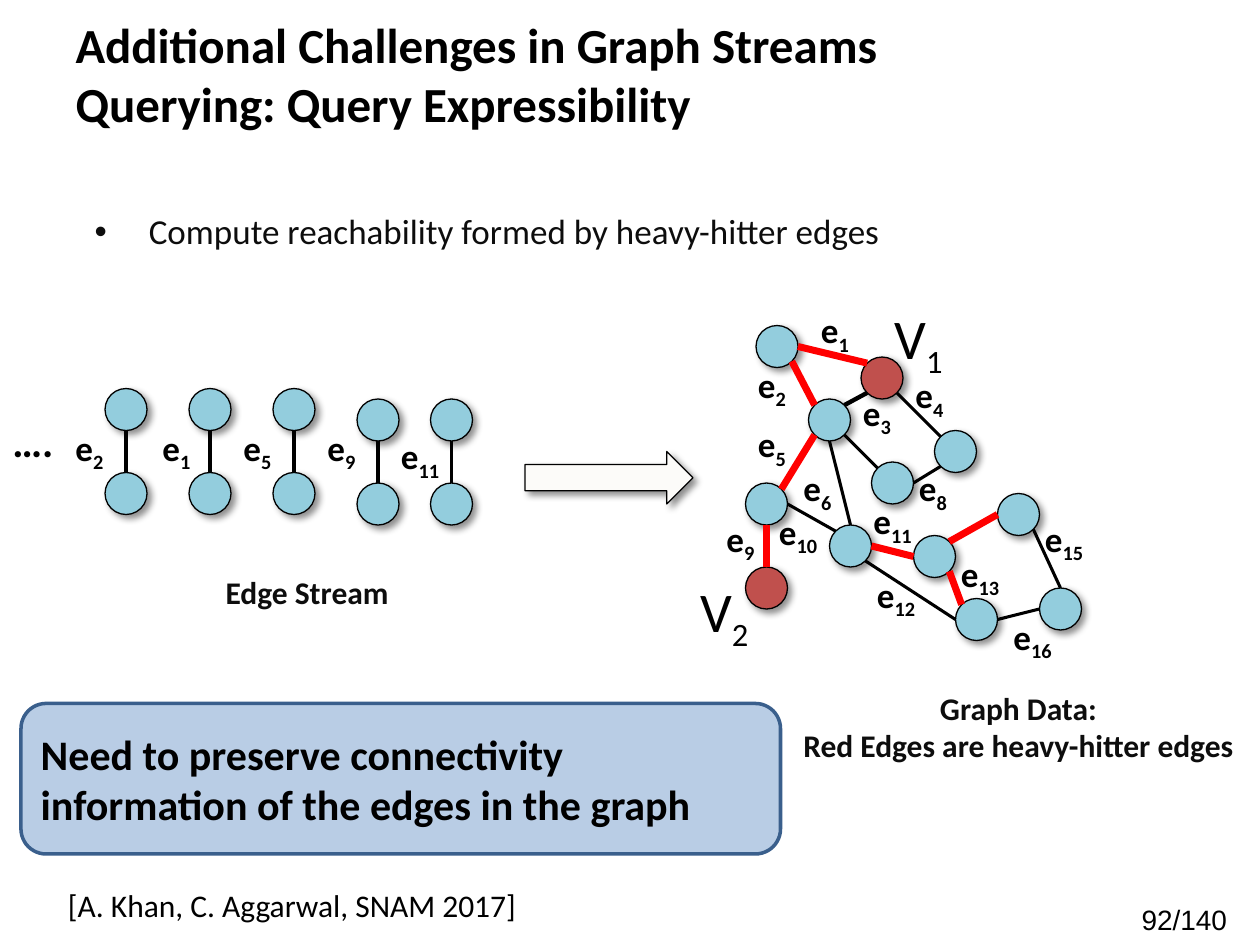
from math import cos, radians, sin

from lxml.etree import SubElement
from pptx import Presentation
from pptx.dml.color import RGBColor
from pptx.enum.shapes import MSO_CONNECTOR, MSO_SHAPE
from pptx.enum.text import MSO_ANCHOR, MSO_AUTO_SIZE, PP_ALIGN
from pptx.oxml.ns import qn
from pptx.util import Pt

BLACK = RGBColor(0x00, 0x00, 0x00)
INK = RGBColor(0x0D, 0x0D, 0x0D)
RED = RGBColor(0xFF, 0x00, 0x00)
NODE_BLUE = RGBColor(0x93, 0xCD, 0xDD)
NODE_RED = RGBColor(0xC0, 0x50, 0x4D)
ARROW_FILL = RGBColor(0xFC, 0xFB, 0xF9)
CALLOUT_FILL = RGBColor(0xB9, 0xCD, 0xE5)
CALLOUT_LINE = RGBColor(0x3A, 0x5F, 0x8C)

RADIUS = 12
COMPASS = {"E": 0, "SE": 45, "S": 90, "SW": 135, "W": 180, "NW": 225, "N": 270, "NE": 315}

NODES = {
    "start": (54, 30), "v1": (114, 48), "upper right": (156, 90), "left": (48, 120),
    "v2": (48, 168), "centre": (96, 144), "upper centre": (120, 108),
    "lower centre": (144, 150), "right": (192, 126), "far right": (216, 180),
    "bottom": (168, 186), "hub": (84, 72),
}
HEAVY_EDGES = [
    ("start", "SE", "hub", "NW"), ("start", "E", "v1", "NW"), ("left", "NE", "hub", "SW"),
    ("v2", "N", "left", "S"), ("centre", "E", "lower centre", "W"),
    ("lower centre", "SE", "bottom", "NW"), ("lower centre", "NE", "right", "W"),
]
LIGHT_EDGES = [
    ("left", "E", "centre", "NW"), ("hub", "SE", "upper centre", "NW"),
    ("hub", "S", "centre", "N"), ("centre", "SE", "bottom", "W"),
    ("upper right", "SW", "upper centre", "E"), ("v1", "SE", "upper right", "NW"),
    ("right", "SE", "far right", "N"), ("bottom", "E", "far right", "W"),
]
MEDIUM_EDGES = [("v1", "SW", "hub", "NE")]
EDGE_LABELS = {
    "1": (72, 5), "2": (36, 36), "3": (96, 52), "4": (126, 42), "5": (36, 70),
    "6": (62, 95), "8": (128, 95), "9": (18, 124), "10": (48, 120), "11": (102, 114),
    "12": (104, 156), "13": (152, 144), "15": (200, 124), "16": (182, 180),
}
STREAM = [
    ("2", 72, 0, 36, 18), ("1", 120, 0, 85.7, 18), ("5", 168, 0, 132, 18),
    ("9", 216, 6, 180, 18), ("11", 258, 6, 222, 23),
]


def write(frame, text, subscript="", size=18, color=BLACK, bold=False, font="Calibri",
          align=PP_ALIGN.LEFT, spacing=None):
    """Fill a text frame with formatted lines and an optional subscript."""
    for index, line in enumerate(text.split("\n")):
        paragraph = frame.add_paragraph() if index else frame.paragraphs[0]
        paragraph.alignment = align
        paragraph.space_before = Pt(0)
        paragraph.line_spacing = spacing
        paragraph.text = line
        if subscript:
            lowered = paragraph.add_run()
            lowered.text = subscript
            lowered.font._element.set("baseline", "-25000")
        for run in paragraph.runs:
            run.font.name = font
            run.font.size = Pt(size)
            run.font.bold = bold
            run.font.color.rgb = color


def add_text(slide, box, text, wrap=True, **style):
    """Add a text box at a box given in points."""
    frame = slide.shapes.add_textbox(*map(Pt, box)).text_frame
    frame.word_wrap = wrap
    frame.auto_size = MSO_AUTO_SIZE.NONE if wrap else MSO_AUTO_SIZE.SHAPE_TO_FIT_TEXT
    write(frame, text, **style)


def add_panel(slide, preset, box, fill, line=BLACK, weight=0.75, shadow=True):
    """Add a filled preset shape, with a soft shadow if wanted."""
    panel = slide.shapes.add_shape(preset, *map(Pt, box))
    panel.fill.solid()
    panel.fill.fore_color.rgb = fill
    panel.line.color.rgb = line
    panel.line.width = Pt(weight)
    panel.shadow.inherit = False
    if shadow:
        effects = panel._element.spPr.find(qn("a:effectLst"))
        outer = SubElement(effects, qn("a:outerShdw"), blurRad=str(Pt(4)), dist=str(Pt(3)),
                           dir="2700000", algn="tl", rotWithShape="0")
        tint = SubElement(outer, qn("a:srgbClr"), val="000000")
        SubElement(tint, qn("a:alpha"), val="43000")
    return panel


def add_node(slide, centre, fill=NODE_BLUE):
    """Add a round node about its centre."""
    x, y = centre
    add_panel(slide, MSO_SHAPE.OVAL, (x - RADIUS, y - RADIUS, 2 * RADIUS, 2 * RADIUS), fill)


def rim(centre, heading):
    """Return the point on a node's rim in a compass heading."""
    angle = radians(COMPASS[heading])
    return centre[0] + RADIUS * cos(angle), centre[1] + RADIUS * sin(angle)


def add_edge(slide, start, end, color=BLACK, weight=1.75):
    """Draw a straight edge between two points."""
    edge = slide.shapes.add_connector(MSO_CONNECTOR.STRAIGHT, *map(Pt, (*start, *end)))
    edge.line.color.rgb = color
    edge.line.width = Pt(weight)
    SubElement(edge._element.spPr, qn("a:effectLst"))


def add_edge_label(slide, left, top, number):
    """Write an edge name with its number lowered."""
    width = 34 if len(number) == 1 else 42
    add_text(slide, (left, top, width, 31.7), "e", wrap=False, subscript=number,
             size=20, bold=True)


def draw_heading(slide, left, top, width):
    """Place the title and the bullet under it."""
    title, body = slide.placeholders
    for holder, box in ((title, (left, top, width, 84)),
                        (body, (left + 10.8, top + 119, width + 7, 43))):
        holder.left, holder.top, holder.width, holder.height = map(Pt, box)
        holder.text_frame.auto_size = MSO_AUTO_SIZE.NONE
    title.text_frame.vertical_anchor = MSO_ANCHOR.MIDDLE
    write(title.text_frame, "Additional Challenges in Graph Streams\vQuerying: Query Expressibility",
          size=28, bold=True)
    write(body.text_frame, "Compute reachability formed by heavy-hitter edges", size=20,
          color=INK, align=PP_ALIGN.JUSTIFY, spacing=0.9)
    bullet = body.text_frame.paragraphs[0]._p.get_or_add_pPr()
    bullet.set("marL", str(Pt(31)))
    bullet.set("indent", str(-Pt(31)))


def draw_stream(slide, left, top):
    """Draw the row of single edges with its caption."""
    for number, x, drop, label_x, label_y in STREAM:
        upper = left + x, top + drop + RADIUS
        lower = left + x, upper[1] + 4 * RADIUS
        add_node(slide, upper)
        add_node(slide, lower)
        add_edge(slide, rim(lower, "N"), rim(upper, "S"))
        add_edge_label(slide, left + label_x, top + label_y, number)
    add_text(slide, (left, top + 12, 42, 36), "….", size=24, bold=True)
    add_text(slide, (left + 9, top + 102, 333, 26.6), "Edge Stream", color=INK, bold=True,
             align=PP_ALIGN.CENTER)


def draw_graph(slide, left, top):
    """Draw the graph with its heavy edges, labels and caption."""
    centres = {name: (left + x, top + y) for name, (x, y) in NODES.items()}
    for name, centre in centres.items():
        add_node(slide, centre, NODE_RED if name in ("v1", "v2") else NODE_BLUE)
    for edges, color, weight in ((HEAVY_EDGES, RED, 4), (MEDIUM_EDGES, BLACK, 2.5),
                                 (LIGHT_EDGES, BLACK, 1.75)):
        for source, leaving, target, arriving in edges:
            add_edge(slide, rim(centres[source], leaving), rim(centres[target], arriving),
                     color, weight)
    for number, (x, y) in EDGE_LABELS.items():
        add_edge_label(slide, left + x, top + y, number)
    for number, x, y in (("1", 114, 2), ("2", 3, 158)):
        add_text(slide, (left + x, top + y, 44.6, 46), "V", wrap=False, subscript=number, size=32)
    add_text(slide, (left + 57, top + 222, 270, 46),
             "Graph Data:\nRed Edges are heavy-hitter edges", color=INK, bold=True,
             align=PP_ALIGN.CENTER)


def draw_callout(slide, box):
    """Draw the rounded box with the conclusion."""
    callout = add_panel(slide, MSO_SHAPE.ROUNDED_RECTANGLE, box, CALLOUT_FILL, CALLOUT_LINE,
                        weight=2, shadow=False)
    callout.text_frame.vertical_anchor = MSO_ANCHOR.MIDDLE
    write(callout.text_frame, "Need to preserve connectivity information of the edges in the graph",
          size=24, bold=True)


def draw_footer(slide, top):
    """Write the citation and the page count."""
    add_text(slide, (31.7, top + 1, 275, 35), "[A. Khan, C. Aggarwal, SNAM 2017]", spacing=0.9)
    add_text(slide, (635, top + 8, 83.5, 28), "92/140", size=16, font="Arial",
             align=PP_ALIGN.CENTER)


def main():
    """Build and save the slide."""
    deck = Presentation()
    deck.slide_width, deck.slide_height = Pt(720), Pt(540)
    slide = deck.slides.add_slide(deck.slide_layouts[1])
    draw_heading(slide, 36, 0, 612)
    draw_graph(slide, 390, 168)
    draw_stream(slide, 0, 222)
    add_panel(slide, MSO_SHAPE.RIGHT_ARROW, (300, 258, 96, 30), ARROW_FILL)
    draw_callout(slide, (12, 402, 434, 86))
    draw_footer(slide, 504)
    deck.save("out.pptx")


if __name__ == "__main__":
    main()
